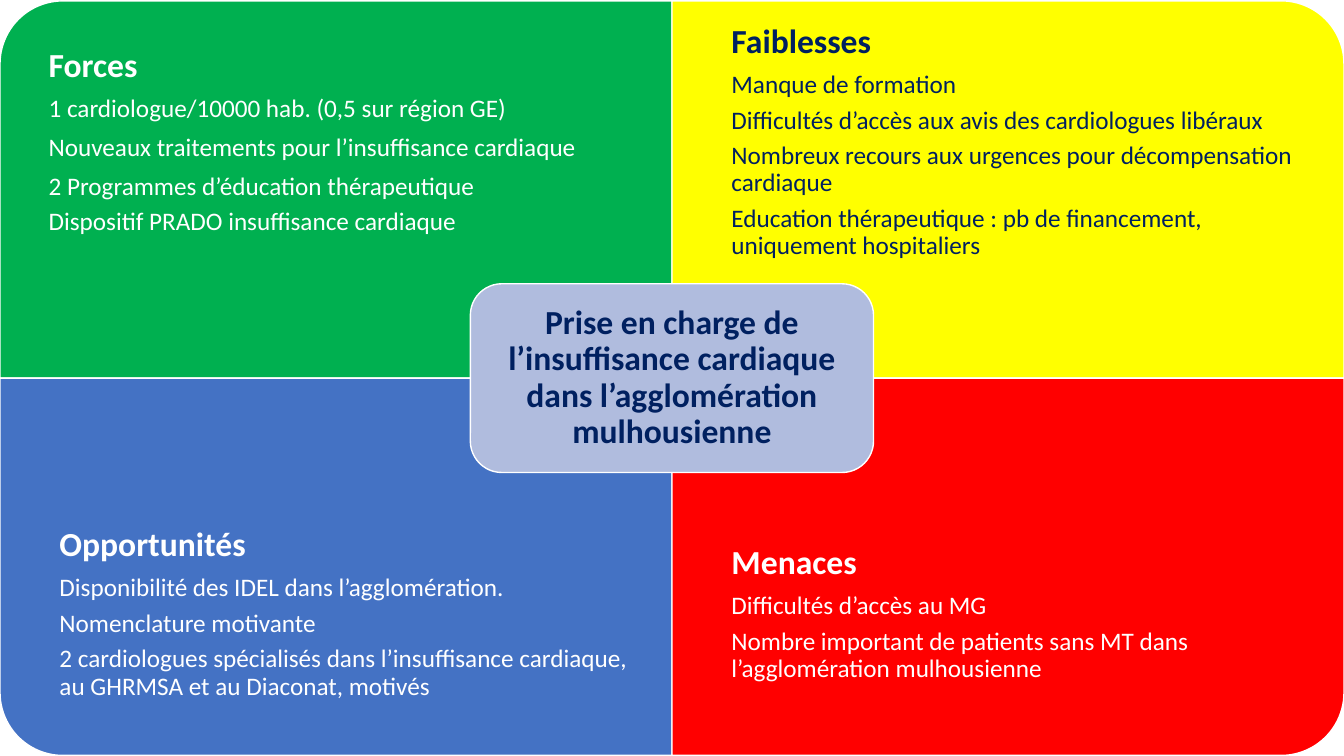
from pptx import Presentation
from pptx.dml.color import RGBColor
from pptx.enum.shapes import MSO_SHAPE as SHAPE
from pptx.enum.text import MSO_ANCHOR as ANCHOR, PP_ALIGN as ALIGN
from pptx.util import Pt

COLORS = {
    "green": "00B050", "yellow": "FFFF00", "blue": "4472C4", "red": "FF0000",
    "lavender": "B0BCDE", "white": "FFFFFF", "navy": "002060",
}
TOPIC = "Prise en charge de l’insuffisance cardiaque dans l’agglomération mulhousienne"
# column, row, rotation, fill, text colour, left indent, heading, items
QUADRANTS = [
    (0, 0, 270, "green", "white", 21, "Forces", [
        "1 cardiologue/10000 hab. (0,5 sur région GE)",
        "Nouveaux traitements pour l’insuffisance cardiaque",
        "2 Programmes d’éducation thérapeutique",
        "Dispositif PRADO insuffisance cardiaque"]),
    (1, 0, 0, "yellow", "navy", 28.8, "Faiblesses", [
        "Manque de formation",
        "Difficultés d’accès aux avis des cardiologues libéraux",
        "Nombreux recours aux urgences pour décompensation cardiaque",
        "Education thérapeutique : pb de financement, uniquement hospitaliers"]),
    (0, 1, 180, "blue", "white", 28.8, "Opportunités", [
        "Disponibilité des IDEL dans l’agglomération.",
        "Nomenclature motivante",
        "2 cardiologues spécialisés dans l’insuffisance cardiaque, au GHRMSA et au Diaconat, motivés"]),
    (1, 1, 90, "red", "white", 28.8, "Menaces", [
        "Difficultés d’accès au MG",
        "Nombre important de patients sans MT dans l’agglomération mulhousienne"]),
]
SINGLE_SPACED = QUADRANTS[0][-1][1:3]

SLIDE_W, SLIDE_H = 960, 540
TOP = 0.6
QUAD_W, QUAD_H = SLIDE_W / 2, 269.5
TEXT_H = 202
CENTER_W, CENTER_H = 288, 134.8
INSET = 13.7


def rgb(name):
    return RGBColor.from_string(COLORS[name])


def add_panel(slide, kind, cx, cy, w, h, fill, rotation=0):
    """Add a white-edged shape centred on (cx, cy); w and h are as seen after rotation."""
    if rotation % 180:
        w, h = h, w
    sp = slide.shapes.add_shape(kind, Pt(cx - w / 2), Pt(cy - h / 2), Pt(w), Pt(h))
    sp.rotation = rotation
    sp.shadow.inherit = False
    sp.fill.solid()
    sp.fill.fore_color.rgb = rgb(fill)
    sp.line.color.rgb = rgb("white")
    sp.line.width = Pt(1)
    return sp


def set_frame(tf):
    tf.word_wrap = True
    tf.vertical_anchor = ANCHOR.MIDDLE
    tf.margin_left = tf.margin_right = tf.margin_top = tf.margin_bottom = Pt(INSET)


def write(p, text, color, heading, indent=0, align=ALIGN.LEFT):
    p.text = text
    p.alignment = align
    p.line_spacing = 1.0 if text in SINGLE_SPACED else 0.9
    p.space_after = Pt(8 if heading else 6)
    pPr = p._p.get_or_add_pPr()
    pPr.set("marL", str(Pt(indent)))
    pPr.set("indent", "0")
    font = p.runs[0].font
    font.name = "Calibri"
    font.size = Pt(24 if heading else 18)
    font.bold = heading
    font.color.rgb = rgb(color)


def add_quadrant(slide, col, row, rotation, fill, color, indent, heading, items):
    left, top = col * QUAD_W, TOP + row * QUAD_H
    add_panel(slide, SHAPE.ROUND_1_RECTANGLE, left + QUAD_W / 2, top + QUAD_H / 2,
              QUAD_W, QUAD_H, fill, rotation)
    text_top = top + row * (QUAD_H - TEXT_H)
    box = slide.shapes.add_textbox(Pt(left), Pt(text_top), Pt(QUAD_W), Pt(TEXT_H))
    tf = box.text_frame
    set_frame(tf)
    write(tf.paragraphs[0], heading, color, True, indent)
    for item in items:
        write(tf.add_paragraph(), item, color, False, indent)


def main():
    prs = Presentation()
    prs.slide_width, prs.slide_height = Pt(SLIDE_W), Pt(SLIDE_H)
    slide = prs.slides.add_slide(prs.slide_layouts[6])
    for quadrant in QUADRANTS:
        add_quadrant(slide, *quadrant)
    center = add_panel(slide, SHAPE.ROUNDED_RECTANGLE, QUAD_W, TOP + QUAD_H,
                       CENTER_W, CENTER_H, "lavender")
    set_frame(center.text_frame)
    write(center.text_frame.paragraphs[0], TOPIC, "navy", True, align=ALIGN.CENTER)
    prs.save("out.pptx")


if __name__ == "__main__":
    main()
